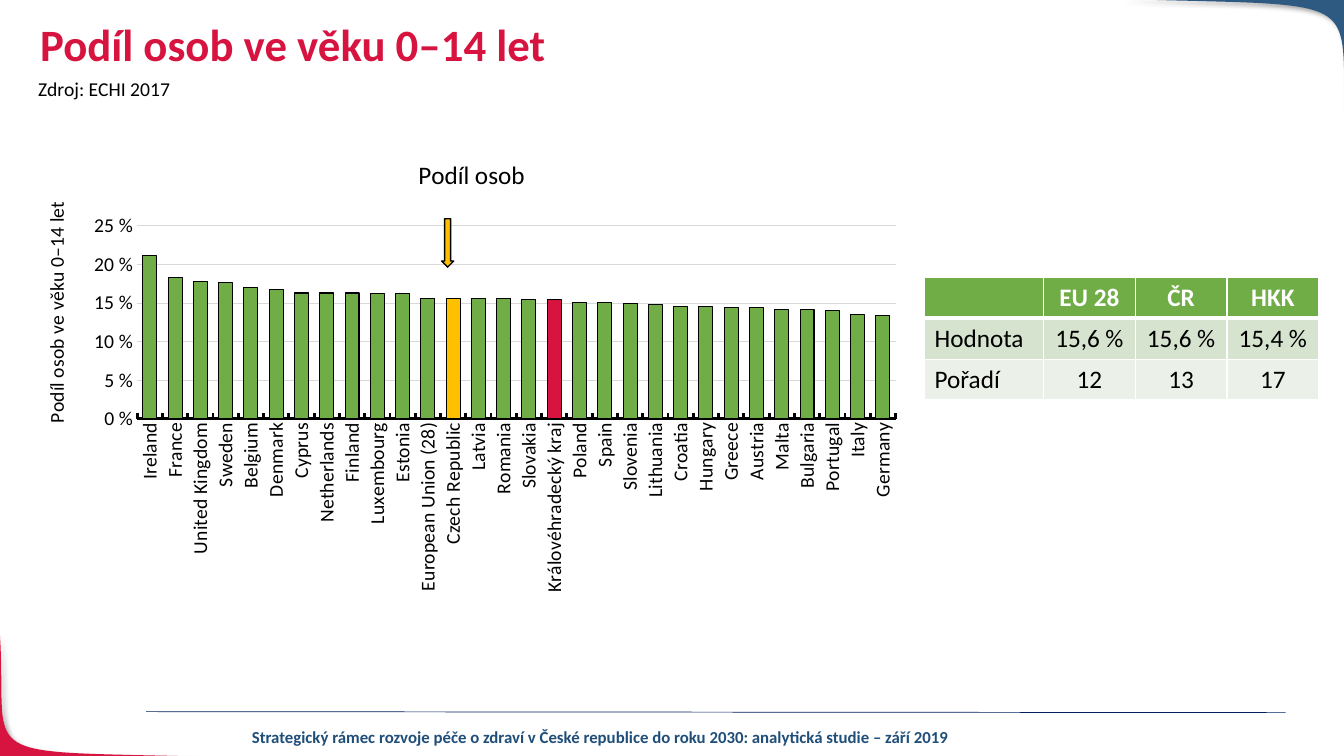
import lxml.etree
import pptx
import pptx.chart.data
import pptx.dml.color
import pptx.enum.chart
import pptx.enum.shapes
import pptx.enum.text
import pptx.oxml
import pptx.oxml.ns
import pptx.util

Inches = pptx.util.Inches
Pt = pptx.util.Pt
RGBColor = pptx.dml.color.RGBColor
qn = pptx.oxml.ns.qn

RED = RGBColor(0xD7, 0x14, 0x40)
BLUE = RGBColor(0x2E, 0x59, 0x80)
NAVY = RGBColor(0x00, 0x20, 0x60)
FOOTER_BLUE = RGBColor(0x1F, 0x4E, 0x79)
GREEN = RGBColor(0x70, 0xAD, 0x47)
AMBER = RGBColor(0xFF, 0xC0, 0x00)
GRID = RGBColor(0xD9, 0xD9, 0xD9)
BLACK = RGBColor(0, 0, 0)
WHITE = RGBColor(0xFF, 0xFF, 0xFF)
ROW_FILLS = [GREEN, RGBColor(0xD5, 0xE3, 0xCF), RGBColor(0xEB, 0xF1, 0xE9)]
FONT = "Calibri"

SHARES = {
    "Ireland": 0.211, "France": 0.183, "United Kingdom": 0.178, "Sweden": 0.176,
    "Belgium": 0.17, "Denmark": 0.167, "Cyprus": 0.163, "Netherlands": 0.163,
    "Finland": 0.163, "Luxembourg": 0.162, "Estonia": 0.162,
    "European Union (28)": 0.156, "Czech Republic": 0.156, "Latvia": 0.156,
    "Romania": 0.156, "Slovakia": 0.155, "Královéhradecký kraj": 0.154,
    "Poland": 0.151, "Spain": 0.151, "Slovenia": 0.149, "Lithuania": 0.148,
    "Croatia": 0.145, "Hungary": 0.145, "Greece": 0.144, "Austria": 0.144,
    "Malta": 0.141, "Bulgaria": 0.141, "Portugal": 0.14, "Italy": 0.135,
    "Germany": 0.134,
}
HIGHLIGHTS = {"Czech Republic": AMBER, "Královéhradecký kraj": RED}
SUMMARY = [
    ["", "EU 28", "ČR", "HKK"],
    ["Hodnota", "15,6 %", "15,6 %", "15,4 %"],
    ["Pořadí", "12", "13", "17"],
]


def set_font(font, size, color, bold=False):
    font.name = FONT
    font.size = Pt(size)
    font.bold = bold
    font.color.rgb = color


def add_text(page, box, text, size, color, bold=False, align=None, wrap=True, spacing=None):
    frame = page.shapes.add_textbox(*map(Inches, box)).text_frame
    frame.word_wrap = wrap
    para = frame.paragraphs[0]
    para.text = text
    para.alignment = align
    para.line_spacing = spacing
    set_font(para.font, size, color, bold)


def add_corner(page, start, controls, end, corner, color):
    curve = []
    for step in range(1, 41):
        t = step / 40
        weights = [(1 - t) ** 3, 3 * t * (1 - t) ** 2, 3 * t * t * (1 - t), t ** 3]
        points = [start, *controls, end]
        curve.append(tuple(Inches(sum(w * p[axis] for w, p in zip(weights, points)))
                           for axis in (0, 1)))
    builder = page.shapes.build_freeform(Inches(start[0]), Inches(start[1]))
    builder.add_line_segments(curve + [tuple(map(Inches, corner))], close=True)
    shape = builder.convert_to_shape()
    shape.fill.solid()
    shape.fill.fore_color.rgb = color
    shape.line.fill.background()
    shape.shadow.inherit = False
    effects = shape._element.spPr.find(qn("a:effectLst"))
    shadow = lxml.etree.SubElement(effects, qn("a:outerShdw"), blurRad=str(Pt(4)),
                                   dist=str(Pt(3)), dir="2700000", algn="tl", rotWithShape="0")
    shade = lxml.etree.SubElement(shadow, qn("a:srgbClr"), val=str(BLACK))
    lxml.etree.SubElement(shade, qn("a:alpha"), val="40000")


def add_footer(page, box):
    left, top, width, height = box
    rule = page.shapes.add_connector(pptx.enum.shapes.MSO_CONNECTOR.STRAIGHT, Inches(left),
                                     Inches(top), Inches(left + width), Inches(top + 0.01))
    rule.line.color.rgb = NAVY
    rule.line.width = Pt(0.5)
    lxml.etree.SubElement(rule._element.spPr, qn("a:effectLst"))
    add_text(page, (left + 0.46, top + 0.1, 8.09, height - 0.1),
             "Strategický rámec rozvoje péče o zdraví v České republice do roku 2030: "
             "analytická studie – září 2019",
             12, FOOTER_BLUE, True, pptx.enum.text.PP_ALIGN.CENTER)


def add_heading(page, box):
    left, top, width, height = box
    add_text(page, (left - 0.02, top + 0.53, 1.52, 0.34), "Zdroj: ECHI 2017", 14, BLACK,
             wrap=False)
    add_text(page, (left, top, width, height), "Podíl osob ve věku 0–14 let", 32, RED, True,
             spacing=0.9)


def place(parent, index, **fractions):
    for old in parent.findall(qn("c:layout")):
        parent.remove(old)
    layout = parent.makeelement(qn("c:layout"))
    parent.insert(index, layout)
    manual = lxml.etree.SubElement(layout, qn("c:manualLayout"))
    if "w" in fractions:
        lxml.etree.SubElement(manual, qn("c:layoutTarget"), val="inner")
    for axis in ("x", "y"):
        lxml.etree.SubElement(manual, qn(f"c:{axis}Mode"), val="edge")
    for name, value in fractions.items():
        lxml.etree.SubElement(manual, qn(f"c:{name}"), val=str(value))


def set_title(title, text, size, x, y):
    para = title.text_frame.paragraphs[0]
    para.text = text
    set_font(para.font, size, BLACK)
    place(title._element, 1, x=x, y=y)


def add_share_chart(page, box):
    left, top, width, height = box
    data = pptx.chart.data.CategoryChartData(number_format='0" "%')
    data.categories = list(SHARES)
    data.add_series("Podíl osob", list(SHARES.values()))
    chart = page.shapes.add_chart(pptx.enum.chart.XL_CHART_TYPE.COLUMN_CLUSTERED,
                                  *map(Inches, box), data).chart
    set_font(chart.font, 10, BLACK)
    chart.has_legend = False
    chart.has_title = True
    set_title(chart.chart_title, "Podíl osob", 18, 0.44, 0.02)
    place(chart._chartSpace.chart.plotArea, 0, x=0.13, y=0.18, w=0.85, h=0.42)

    plot = chart.plots[0]
    plot.gap_width = 81
    plot.overlap = -27
    plot.vary_by_categories = False
    series = plot.series[0]
    names = list(SHARES)
    bars = [(series, GREEN)]
    bars += [(series.points[names.index(name)], color) for name, color in HIGHLIGHTS.items()]
    for bar, color in bars:
        bar.format.fill.solid()
        bar.format.fill.fore_color.rgb = color
        bar.format.line.color.rgb = BLACK
        bar.format.line.width = Pt(0.75)

    tick = pptx.enum.chart.XL_TICK_MARK
    countries, values = chart.category_axis, chart.value_axis
    for axis, mark in ((countries, tick.INSIDE), (values, tick.NONE)):
        set_font(axis.tick_labels.font, 14, BLACK)
        axis.major_tick_mark = mark
        axis.minor_tick_mark = tick.NONE
    countries.format.line.color.rgb = BLACK
    countries.format.line.width = Pt(2)
    countries.tick_labels._element.txPr.find(qn("a:bodyPr")).set("rot", "-5400000")
    values.minimum_scale, values.maximum_scale, values.major_unit = 0, 0.25, 0.05
    values.tick_labels.number_format = '0" "%'
    values.tick_labels.number_format_is_linked = False
    values.format.line.fill.background()
    values.major_gridlines.format.line.color.rgb = GRID
    values.major_gridlines.format.line.width = Pt(0.75)
    set_title(values.axis_title, "Podíl osob ve věku 0–14 let", 14, 0.02, 0.12)

    arrow = page.shapes.add_shape(pptx.enum.shapes.MSO_SHAPE.DOWN_ARROW, Inches(left + 4.17),
                                  Inches(top + 0.75), Inches(0.12), Inches(0.48))
    arrow.shadow.inherit = False
    arrow.fill.solid()
    arrow.fill.fore_color.rgb = AMBER
    arrow.line.color.rgb = BLACK
    arrow.line.width = Pt(1)


def set_borders(cell, row):
    properties = cell._tc.get_or_add_tcPr()
    widths = {"L": 1, "R": 1, "T": 3 if row == 1 else 1, "B": 3 if row == 0 else 1}
    for index, (side, width) in enumerate(widths.items()):
        border = properties.makeelement(qn(f"a:ln{side}"), w=str(Pt(width)))
        fill = lxml.etree.SubElement(border, qn("a:solidFill"))
        lxml.etree.SubElement(fill, qn("a:srgbClr"), val=str(WHITE))
        properties.insert(index, border)


def add_summary_table(page, box):
    table = page.shapes.add_table(len(SUMMARY), len(SUMMARY[0]), *map(Inches, box)).table
    for column, width in zip(table.columns, (1.18, 0.91, 0.91, 0.91)):
        column.width = Inches(width)
    for row, texts in enumerate(SUMMARY):
        for column, text in enumerate(texts):
            cell = table.cell(row, column)
            cell.fill.solid()
            cell.fill.fore_color.rgb = ROW_FILLS[row]
            set_borders(cell, row)
            para = cell.text_frame.paragraphs[0]
            para.text = text
            if column:
                para.alignment = pptx.enum.text.PP_ALIGN.CENTER
            set_font(para.font, 18, BLACK if row else WHITE, row == 0)


def main():
    deck = pptx.Presentation()
    deck.slide_width, deck.slide_height = Inches(13.33), Inches(7.5)
    page = deck.slides.add_slide(deck.slide_layouts[6])
    add_corner(page, (2.13, 7.51), [(-0.34, 7.44), (0.08, 7.59)], (0, 6.3), (-0.01, 7.51), RED)
    add_corner(page, (11.11, -0.01), [(13.7, 0.07), (13.26, -0.1)], (13.35, 1.42),
               (13.35, -0.01), BLUE)
    add_footer(page, (1.45, 7.06, 11.3, 0.4))
    add_heading(page, (0.3, 0.18, 11.5, 0.69))
    add_share_chart(page, (0.21, 1.42, 8.85, 4.56))
    add_summary_table(page, (9.17, 2.75, 3.9, 1.22))
    deck.save("out.pptx")


if __name__ == "__main__":
    main()
